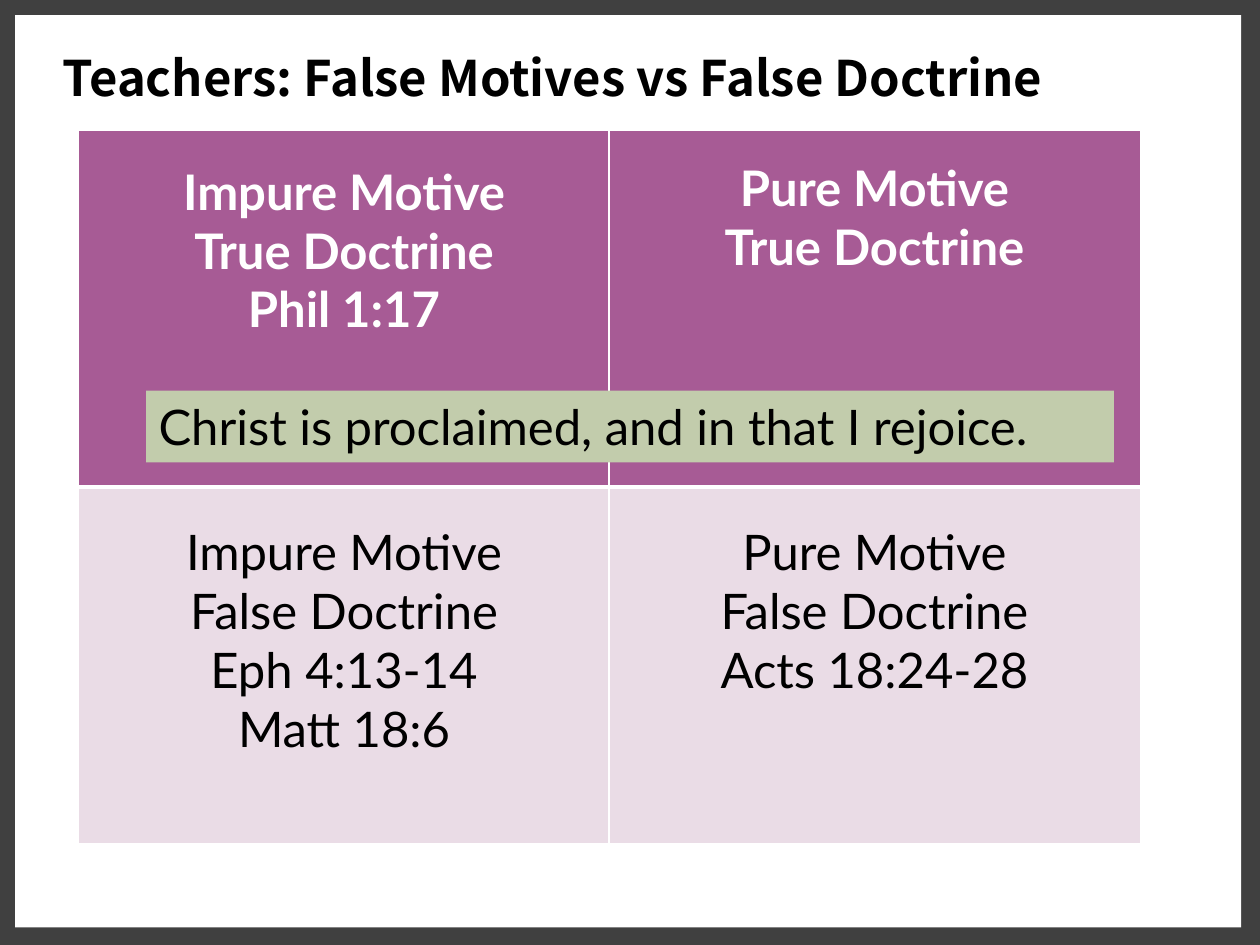
from lxml.etree import SubElement
from pptx import Presentation
from pptx.dml.color import RGBColor
from pptx.enum.shapes import MSO_SHAPE as Shape
from pptx.enum.text import MSO_ANCHOR as Anchor, PP_ALIGN as Align
from pptx.oxml.ns import qn
from pptx.util import Inches, Pt

COLORS = {
    "frame": "404040", "panel": "FFFFFF", "rule": "FFFFFF",
    "true": "A75B95", "false": "EADCE6", "quote": "C2CCAC",
    "light": "FFFFFF", "dark": "000000",
}
TITLE = "Teachers: False Motives vs False Doctrine"
QUOTE = "Christ is proclaimed, and in that I rejoice."
ROW_FILLS = ["true", "false"]
TABLE = (0.62, 1.03, 8.43, 5.67)
# Place, colour, bold, lines
QUADRANTS = [
    ((0.79, 1.23, 3.88, 1.51), "light", True,
     ["Impure Motive", "True Doctrine", "Phil 1:17"]),
    ((5, 1.2, 3.88, 1.51), "light", True,
     ["Pure Motive", "True Doctrine"]),
    ((5, 4.09, 3.88, 1.51), "dark", False,
     ["Pure Motive", "False Doctrine", "Acts 18:24-28"]),
    ((0.79, 4.09, 3.88, 2.46), "dark", False,
     ["Impure Motive", "False Doctrine", "Eph 4:13-14", "Matt 18:6"]),
]


def color(name):
    return RGBColor.from_string(COLORS[name])


def inches(place):
    return [Inches(value) for value in place]


def add_rectangle(page, place, fill):
    box = page.shapes.add_shape(Shape.RECTANGLE, *inches(place))
    box.shadow.inherit = False
    box.fill.solid()
    box.fill.fore_color.rgb = color(fill)
    box.line.fill.background()
    return box


def write(box, lines, font="Lato", ink="dark", bold=False, align=Align.LEFT):
    frame = box.text_frame
    frame.word_wrap = True
    frame.vertical_anchor = Anchor.TOP
    for index, line in enumerate(lines):
        para = frame.add_paragraph() if index else frame.paragraphs[0]
        para.alignment = align
        span = para.add_run()
        span.text = line
        span.font.name = font
        span.font.size = Pt(28)
        span.font.bold = bold
        span.font.color.rgb = color(ink)


def add_border(cell, side, width):
    line = SubElement(cell._tc.get_or_add_tcPr(), qn(f"a:ln{side}"), w=str(Pt(width)))
    fill = SubElement(line, qn("a:solidFill"))
    SubElement(fill, qn("a:srgbClr"), val=COLORS["rule"])


def add_grid(page):
    table = page.shapes.add_table(2, 2, *inches(TABLE)).table
    for row, fill in enumerate(ROW_FILLS):
        for column in range(2):
            cell = table.cell(row, column)
            # The rule between the rows is the only thick one.
            widths = {"L": 1, "R": 1, "T": 3 if row else 1, "B": 1 if row else 3}
            for side, width in widths.items():
                add_border(cell, side, width)
            cell.fill.solid()
            cell.fill.fore_color.rgb = color(fill)


def main():
    deck = Presentation()
    deck.slide_width, deck.slide_height = Inches(10), Inches(7.5)
    page = deck.slides.add_slide(deck.slide_layouts[6])
    page.background.fill.solid()
    page.background.fill.fore_color.rgb = color("frame")
    add_rectangle(page, (0.12, 0.12, 9.73, 7.24), "panel")

    title = page.shapes.add_textbox(*inches((0.4, 0.33, 9.25, 0.57)))
    write(title, [TITLE], font="Noto Sans CJK JP", bold=True)
    add_grid(page)
    for place, ink, bold, lines in QUADRANTS:
        box = page.shapes.add_textbox(*inches(place))
        write(box, lines, ink=ink, bold=bold, align=Align.CENTER)
    write(add_rectangle(page, (1.16, 3.1, 7.68, 0.57), "quote"), [QUOTE])

    deck.save("out.pptx")


if __name__ == "__main__":
    main()
